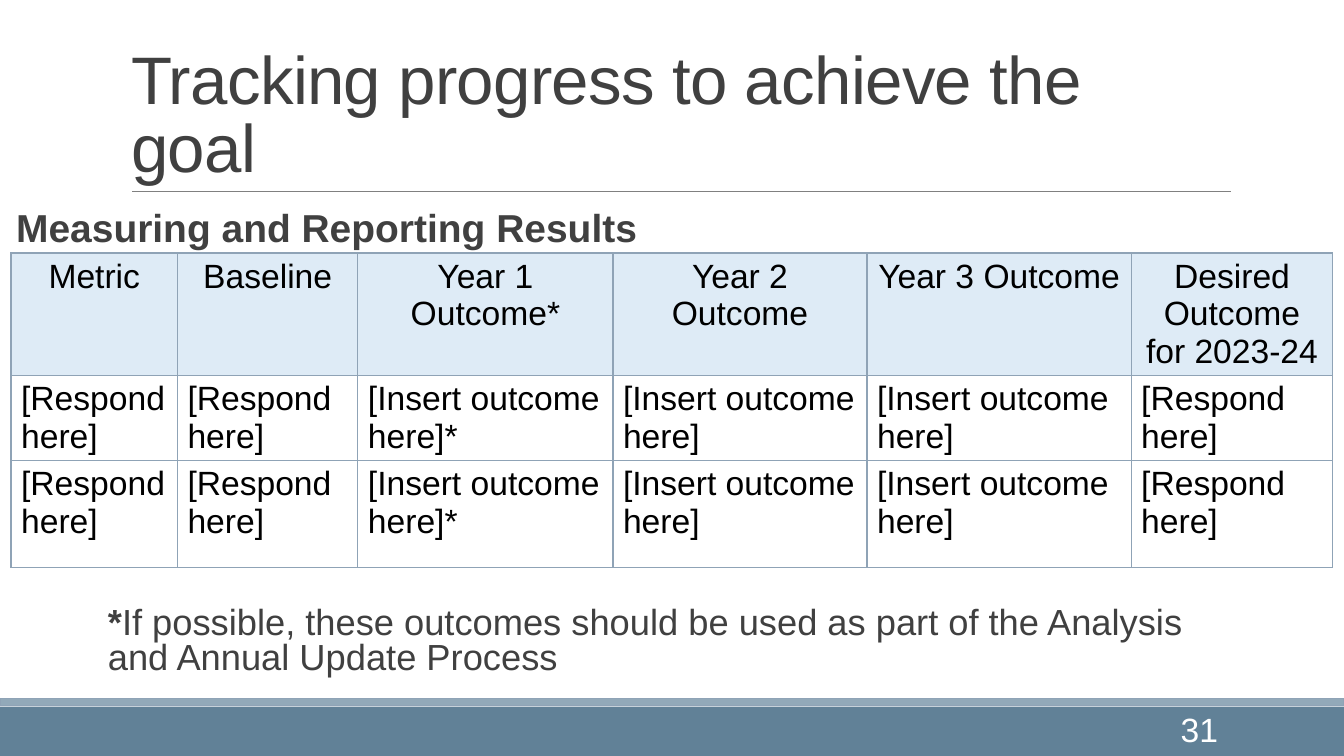
from dataclasses import dataclass
from lxml import etree
from pptx import Presentation
from pptx.dml.color import RGBColor
from pptx.enum.shapes import MSO_CONNECTOR, MSO_SHAPE
from pptx.enum.text import MSO_ANCHOR, MSO_AUTO_SIZE, PP_ALIGN
from pptx.oxml import parse_xml
from pptx.oxml.ns import nsdecls, qn
from pptx.util import Inches, Pt

RECTANGLE = MSO_SHAPE.RECTANGLE
STRAIGHT = MSO_CONNECTOR.STRAIGHT
BOTTOM, MIDDLE, TOP = MSO_ANCHOR.BOTTOM, MSO_ANCHOR.MIDDLE, MSO_ANCHOR.TOP
LEFT, CENTER, RIGHT = PP_ALIGN.LEFT, PP_ALIGN.CENTER, PP_ALIGN.RIGHT
NO_AUTOFIT = MSO_AUTO_SIZE.NONE


@dataclass(frozen=True)
class Theme:
    font: str = "Arial"
    text: str = "404040"
    table_text: str = "000000"
    white: str = "FFFFFF"
    header: str = "DEEBF6"
    border: str = "8FA3B6"
    rule: str = "808080"
    footer: str = "618197"
    footer_strip: str = "92A9B9"
    title_size: float = 48
    heading_size: float = 27.8
    note_size: float = 25.9
    table_size: float = 24


theme = Theme()


def color(value):
    return RGBColor.from_string(value)


def add_run(paragraph, text, size, text_color, bold=False):
    run = paragraph.add_run()
    run.text = text
    run.font.name = theme.font
    run.font.size = Pt(size)
    run.font.bold = bold
    run.font.color.rgb = color(text_color)
    return run


presentation = Presentation()
presentation.slide_width = Inches(13.33)
presentation.slide_height = Inches(7.5)
slide = presentation.slides.add_slide(presentation.slide_layouts[3])

for top, height, fill, line in (
    (7.01, 0.5, theme.footer, None),
    (6.93, 0.07, theme.footer_strip, theme.border),
):
    band = slide.shapes.add_shape(RECTANGLE, 0, Inches(top), Inches(13.33), Inches(height))
    band.shadow.inherit = False
    band.fill.solid()
    band.fill.fore_color.rgb = color(fill)
    if line:
        band.line.color.rgb = color(line)
        band.line.width = Pt(1.25)
    else:
        band.line.fill.background()

title_rule = slide.shapes.add_connector(
    STRAIGHT, Inches(1.31), Inches(1.9), Inches(12.21), Inches(1.9)
)
title_rule.line.color.rgb = color(theme.rule)
title_rule.line.width = Pt(0.5)
etree.SubElement(title_rule._element.spPr, qn("a:effectLst"))

title = slide.shapes.title
title.left, title.top, title.width, title.height = map(Inches, (1.2, 0.31, 11, 1.59))
title.text_frame.auto_size = NO_AUTOFIT
title.text_frame.vertical_anchor = BOTTOM
paragraph = title.text_frame.paragraphs[0]
paragraph.alignment = LEFT
paragraph.line_spacing = 0.85
title_run = add_run(paragraph, "Tracking progress to achieve the goal", theme.title_size, theme.text)
title_run.font._element.set("spc", "-50")

note = "If possible, these outcomes should be used as part of the Analysis and Annual Update Process"
bodies = (
    (1, (0.11, 2.06, 8.74, 0.9), theme.heading_size, (("Measuring and Reporting Results", True),)),
    (2, (1.02, 5.98, 11.18, 0.84), theme.note_size, (("*", True), (note, False))),
)
for index, place, size, runs in bodies:
    body = slide.placeholders[index]
    body.left, body.top, body.width, body.height = map(Inches, place)
    frame = body.text_frame
    frame.auto_size = NO_AUTOFIT
    frame.vertical_anchor = TOP
    frame.margin_left = frame.margin_right = Inches(0.05)
    frame.margin_top = frame.margin_bottom = Inches(0.05)
    paragraph = frame.paragraphs[0]
    paragraph.line_spacing = 0.8
    paragraph.space_before = Pt(0)
    paragraph.space_after = Pt(2)
    properties = paragraph._p.get_or_add_pPr()
    properties.set("marL", "0")
    properties.set("indent", "0")
    etree.SubElement(properties, qn("a:buNone"))
    for text, bold in runs:
        add_run(paragraph, text, size, theme.text, bold)

respond, outcome = "[Respond here]", "[Insert outcome here]"
response_row = (respond, respond, outcome + "*", outcome, outcome, respond)
table_rows = (
    ("Metric", "Baseline", "Year 1 Outcome*", "Year 2 Outcome", "Year 3 Outcome",
     "Desired Outcome for 2023-24"),
    response_row,
    response_row,
)
column_widths = (1.65, 1.79, 2.53, 2.52, 2.62, 2)
row_heights = (1.06, 0.48, 1.06)
table = slide.shapes.add_table(
    len(table_rows), len(column_widths), Inches(0.11), Inches(2.51),
    Inches(sum(column_widths)), Inches(sum(row_heights)),
).table
table.first_row = table.horz_banding = False
for column, width in zip(table.columns, column_widths):
    column.width = Inches(width)
for row, height in zip(table.rows, row_heights):
    row.height = Inches(height)

for row_index, row_texts in enumerate(table_rows):
    is_header = row_index == 0
    for column_index, text in enumerate(row_texts):
        cell = table.cell(row_index, column_index)
        cell_properties = cell._tc.get_or_add_tcPr()
        for side in ("lnL", "lnR", "lnT", "lnB"):
            cell_properties.append(parse_xml(
                f'<a:{side} {nsdecls("a")} w="12700"><a:solidFill>'
                f'<a:srgbClr val="{theme.border}"/></a:solidFill></a:{side}>'
            ))
        if is_header:
            cell.fill.solid()
            cell.fill.fore_color.rgb = color(theme.header)
        else:
            cell.fill.background()
        paragraph = cell.text_frame.paragraphs[0]
        paragraph.alignment = CENTER if is_header else LEFT
        add_run(paragraph, text, theme.table_size, theme.table_text)

page_number = slide.shapes.add_textbox(Inches(10.75), Inches(7.03), Inches(1.43), Inches(0.4))
page_number.text_frame.word_wrap = True
page_number.text_frame.vertical_anchor = MIDDLE
paragraph = page_number.text_frame.paragraphs[0]
paragraph.alignment = RIGHT
add_run(paragraph, "31", theme.table_size, theme.white)

presentation.save("out.pptx")
